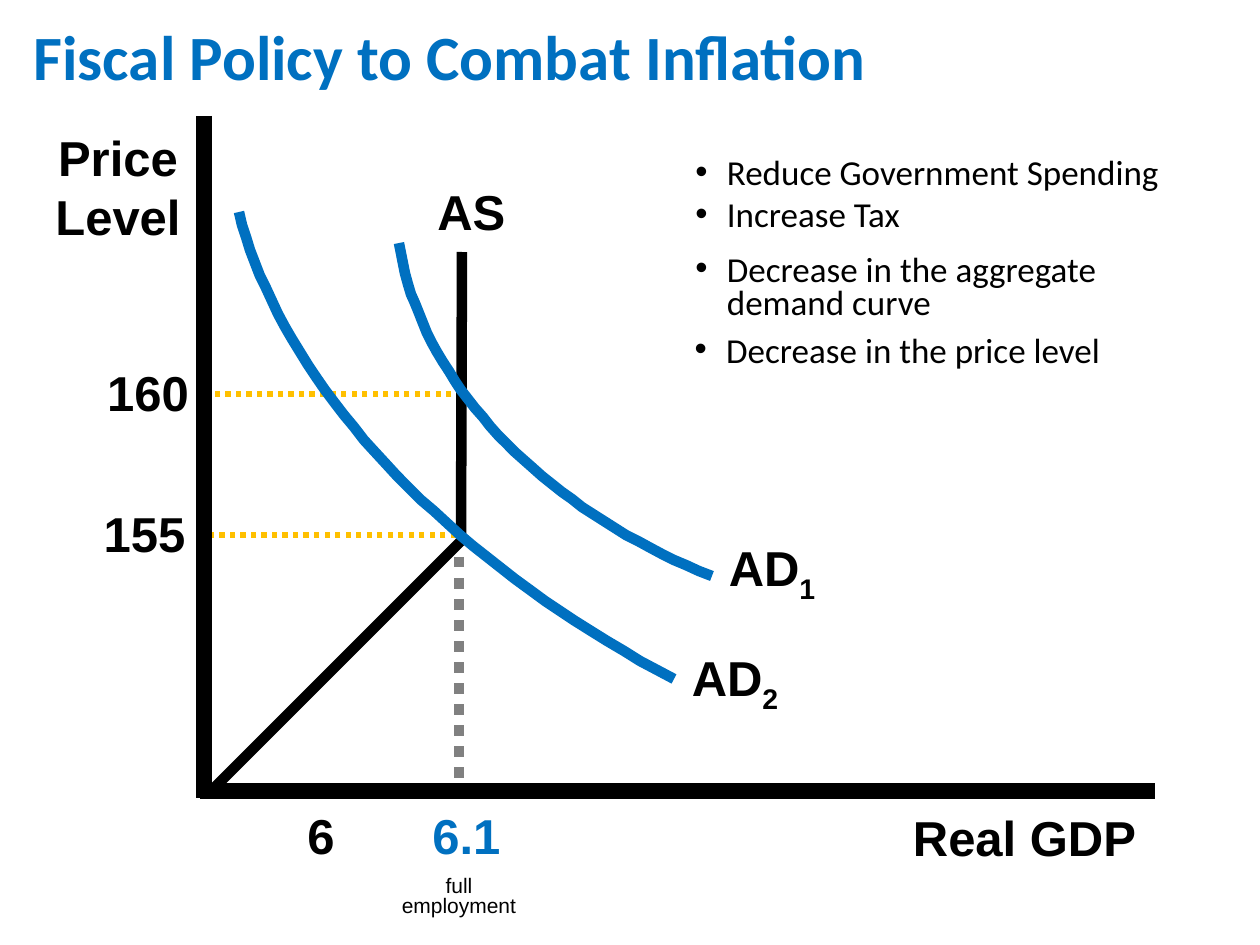
from lxml.etree import SubElement
from pptx import Presentation
from pptx.dml.color import RGBColor
from pptx.enum.dml import MSO_LINE
from pptx.enum.shapes import MSO_CONNECTOR
from pptx.enum.text import MSO_ANCHOR, MSO_AUTO_SIZE, PP_ALIGN
from pptx.oxml.ns import qn
from pptx.util import Pt

SCALE = 914400 / 126  # EMU per px
THEME = {
    "black": "000000", "blue": "0070C0", "gold": "FFC000", "gray": "808080", "white": "FFFFFF",
    "title": 36, "label": 28, "bullet": 20, "note": 12,
    "axis": 9, "curve": 6, "guide": 3,
    "label_font": "Arial", "body_font": "Calibri",
}

# Content: box is left, top, width, height in px
TITLE = ("Fiscal Policy to Combat Inflation", (21, 11, 1081, 90))
LINES = [  # start, end, colour, weight, dotted
    ((462, 394), (204, 394), "gold", "guide", True),
    ((462, 252), (461, 538), "black", "curve", False),
    ((459, 557), (459, 799), "gray", "curve", True),
    ((467, 535), (215, 787), "black", "curve", False),
    ((200, 791), (1155, 791), "black", "axis", False),
    ((456, 535), (204, 535), "gold", "guide", True),
    ((204, 116), (204, 798), "black", "axis", False),
]
CURVES = [  # start, two control points, end
    ((712, 576), (538, 507), (420, 379), (399, 243)),  # AD1
    ((674, 679), (445, 559), (280, 381), (239, 212)),  # AD2
]
CENTER, TIGHT = {"align": PP_ALIGN.CENTER}, {"align": PP_ALIGN.CENTER, "spacing": 0.8}
LABELS = [  # text, subscript, box, format
    ("6", "", (265, 811, 112, 60), TIGHT),
    ("6.1", "", (393, 811, 147, 60), {**TIGHT, "color": "blue"}),
    ("AS", "", (425, 175, 136, 67), {}),
    ("155", "", (63, 509, 163, 60), TIGHT),
    ("160", "", (69, 368, 158, 60), TIGHT),
    ("Real GDP", "", (872, 801, 305, 66), CENTER),
    ("full employment", "", (387, 871, 144, 53), {**TIGHT, "size": "note", "bold": False}),
    ("AD", "1", (693, 538, 158, 60), TIGHT),
    ("AD", "2", (656, 648, 158, 60), TIGHT),
    ("Price Level", "", (16, 121, 204, 131), CENTER),
]
BULLETS = [  # lines, box, format
    (["Reduce Government Spending", "Increase Tax"], (683, 144, 541, 97), {}),
    (["Decrease in the aggregate demand curve"], (683, 249, 509, 82), {"spacing": 0.8}),
    (["Decrease in the price level"], (672, 330, 451, 48), {**TIGHT, "wrap": False}),
]


def px(value):
    return round(value * SCALE)


def rgb(name):
    return RGBColor.from_string(THEME[name])


def write(shape, lines, sub="", size="label", font="label_font", color="black", bold=True,
          align=PP_ALIGN.LEFT, spacing=1.0, wrap=True, bullet=False):
    frame = shape.text_frame
    frame.word_wrap = wrap
    frame.auto_size = MSO_AUTO_SIZE.NONE
    frame.vertical_anchor = MSO_ANCHOR.TOP
    for index, line in enumerate(lines):
        para = frame.paragraphs[0] if index == 0 else frame.add_paragraph()
        para.alignment, para.line_spacing, para.space_before = align, spacing, Pt(0)
        if bullet:
            props = para._p.get_or_add_pPr()
            props.set("marL", "228600")
            props.set("indent", "-228600")
            SubElement(props, qn("a:buFont")).set("typeface", THEME["label_font"])
            SubElement(props, qn("a:buChar")).set("char", "•")
        for text, baseline in ((line, None), (sub, "-25000")):
            if not text:
                continue
            span = para.add_run()
            span.text = text
            span.font.name, span.font.size = THEME[font], Pt(THEME[size])
            span.font.bold, span.font.color.rgb = bold, rgb(color)
            if baseline:
                span._r.get_or_add_rPr().set("baseline", baseline)


def add_text(page, lines, box, **style):
    write(page.shapes.add_textbox(*map(px, box)), lines, **style)


def add_line(page, start, end, color, weight, dotted):
    line = page.shapes.add_connector(MSO_CONNECTOR.STRAIGHT, *map(px, start + end))
    line.line.color.rgb, line.line.width = rgb(color), Pt(THEME[weight])
    if dotted:
        line.line.dash_style = MSO_LINE.ROUND_DOT
    SubElement(line._element.spPr, qn("a:effectLst"))


def bezier(points, t):
    weights = ((1 - t) ** 3, 3 * t * (1 - t) ** 2, 3 * t * t * (1 - t), t ** 3)
    return tuple(sum(w * p[axis] for w, p in zip(weights, points)) for axis in (0, 1))


def add_curve(page, points, steps=40):
    track = [bezier(points, step / steps) for step in range(steps + 1)]
    builder = page.shapes.build_freeform(*track[0], scale=SCALE)
    builder.add_line_segments(track[1:], close=False)
    curve = builder.convert_to_shape()
    curve.shadow.inherit = False
    curve.fill.background()
    curve.line.color.rgb, curve.line.width = rgb("blue"), Pt(THEME["curve"])


def main():
    deck = Presentation()
    deck.slide_width, deck.slide_height = px(1260), px(945)
    page = deck.slides.add_slide(deck.slide_layouts[5])

    # Title
    text, box = TITLE
    title = page.shapes.title
    title.left, title.top, title.width, title.height = map(px, box)
    title.fill.solid()
    title.fill.fore_color.rgb = rgb("white")
    write(title, [text], size="title", font="body_font", color="blue")

    # Axes, supply line, guides and demand curves
    for line in LINES:
        add_line(page, *line)
    for points in CURVES:
        add_curve(page, points)

    # Labels and policy notes
    for text, sub, box, style in LABELS:
        add_text(page, [text], box, sub=sub, **style)
    for lines, box, style in BULLETS:
        add_text(page, lines, box, size="bullet", font="body_font", bold=False, bullet=True, **style)

    deck.save("out.pptx")


if __name__ == "__main__":
    main()
